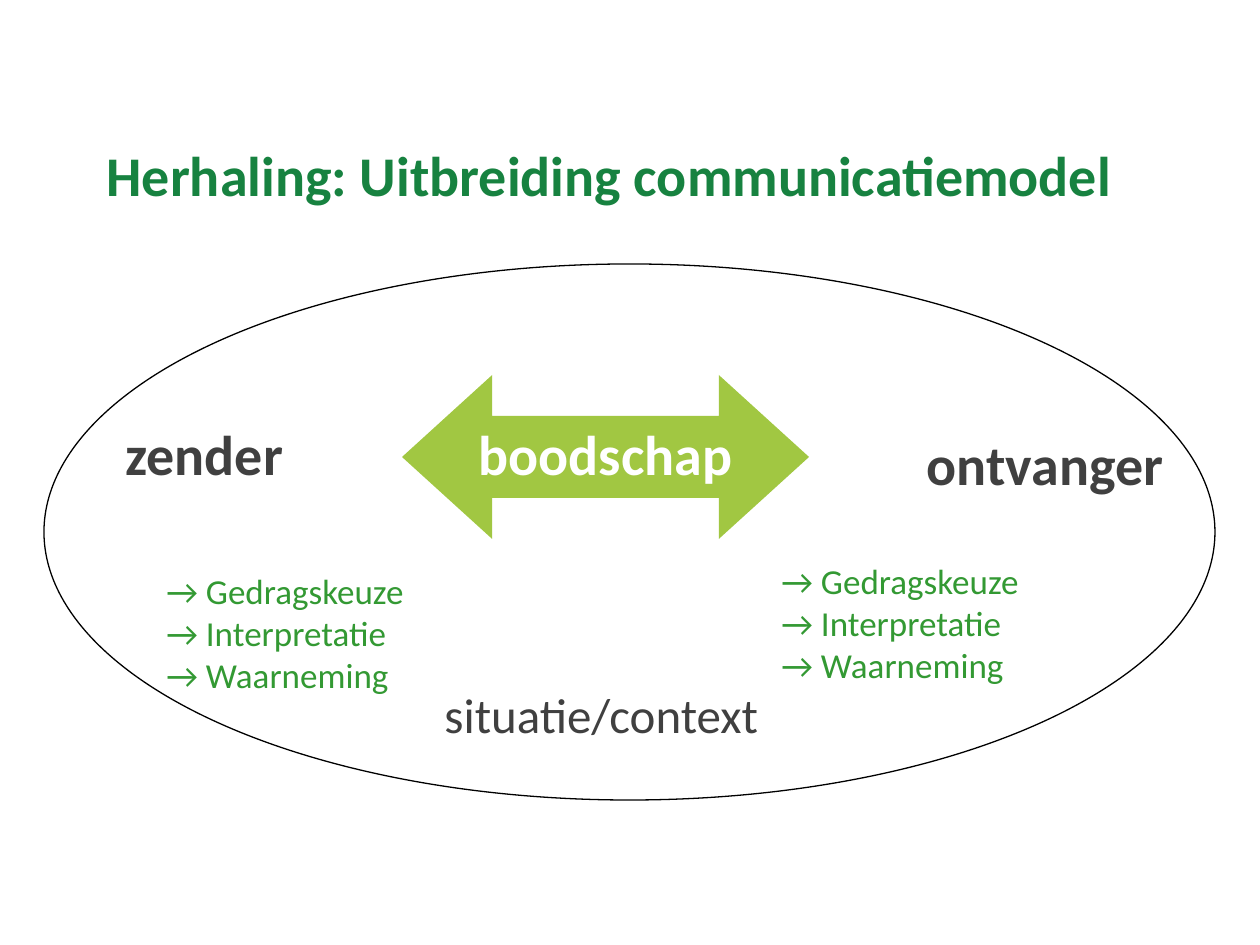
from pptx import Presentation
from pptx.dml.color import RGBColor
from pptx.enum.shapes import MSO_SHAPE as Shape
from pptx.enum.text import MSO_ANCHOR as Anchor, MSO_AUTO_SIZE as AutoSize, PP_ALIGN as Align
from pptx.util import Emu, Pt

PX = 914400 / 126
TITLE_GREEN = RGBColor(0x17, 0x82, 0x40)
LIST_GREEN = RGBColor(0x33, 0x99, 0x33)
LIME = RGBColor(0xA1, 0xC7, 0x42)
GRAY = RGBColor(0x40, 0x40, 0x40)
BLACK = RGBColor(0, 0, 0)
WHITE = RGBColor(0xFF, 0xFF, 0xFF)

TITLE_ONLY = 5
STEPS = ["→ Gedragskeuze", "→ Interpretatie", "→ Waarneming"]


def px(*lengths):
    return [Emu(round(length * PX)) for length in lengths]


def write(shape, *lines, size=32, color=GRAY, bold=False, align=Align.LEFT, anchor=Anchor.TOP):
    """Fill the shape with one paragraph per line."""
    frame = shape.text_frame
    frame.word_wrap = True
    frame.auto_size = AutoSize.NONE
    frame.vertical_anchor = anchor
    for index, line in enumerate(lines):
        para = frame.paragraphs[0] if index == 0 else frame.add_paragraph()
        para.alignment = align
        span = para.add_run()
        span.text = line
        font = span.font
        font.name, font.size, font.bold = "Calibri", Pt(size), bold
        font.color.rgb = color


class Canvas:
    def __init__(self, slide):
        self.slide = slide

    def title(self, text, left, top, width, height):
        box = self.slide.shapes.title
        box.left, box.top, box.width, box.height = px(left, top, width, height)
        write(box, text, color=TITLE_GREEN, bold=True, anchor=Anchor.MIDDLE)

    def text(self, lines, left, top, width, height, **style):
        box = self.slide.shapes.add_textbox(*px(left, top, width, height))
        write(box, *lines, **style)

    def shape(self, kind, left, top, width, height, fill=None, line=None):
        shape = self.slide.shapes.add_shape(kind, *px(left, top, width, height))
        shape.shadow.inherit = False
        if fill is None:
            shape.fill.background()
        else:
            shape.fill.solid()
            shape.fill.fore_color.rgb = fill
        if line is None:
            shape.line.fill.background()
        else:
            shape.line.color.rgb = line
            shape.line.width = Pt(0.75)
        return shape


def main():
    deck = Presentation()
    deck.slide_width, deck.slide_height = px(1260, 945)
    canvas = Canvas(deck.slides.add_slide(deck.slide_layouts[TITLE_ONLY]))

    canvas.title("Herhaling: Uitbreiding communicatiemodel", 94, 135, 1071, 79)
    canvas.text(["zender"], 113, 413, 338, 79, bold=True)
    canvas.text(["ontvanger"], 838, 423, 338, 79, bold=True, align=Align.RIGHT)

    arrow = canvas.shape(Shape.LEFT_RIGHT_ARROW, 402, 375, 407, 164, fill=LIME)
    arrow.adjustments[0] = 0.5
    arrow.adjustments[1] = 0.55
    canvas.shape(Shape.OVAL, 44, 264, 1171, 536, line=BLACK)

    canvas.text(["situatie/context"], 432, 678, 369, 72, size=28)
    canvas.text(["boodschap"], 392, 413, 427, 79, color=WHITE, bold=True, align=Align.CENTER)
    for left, top in [(154, 562), (769, 552)]:
        canvas.text(STEPS, left, top, 417, 141, size=20, color=LIST_GREEN, anchor=Anchor.MIDDLE)

    deck.save("out.pptx")


if __name__ == "__main__":
    main()
